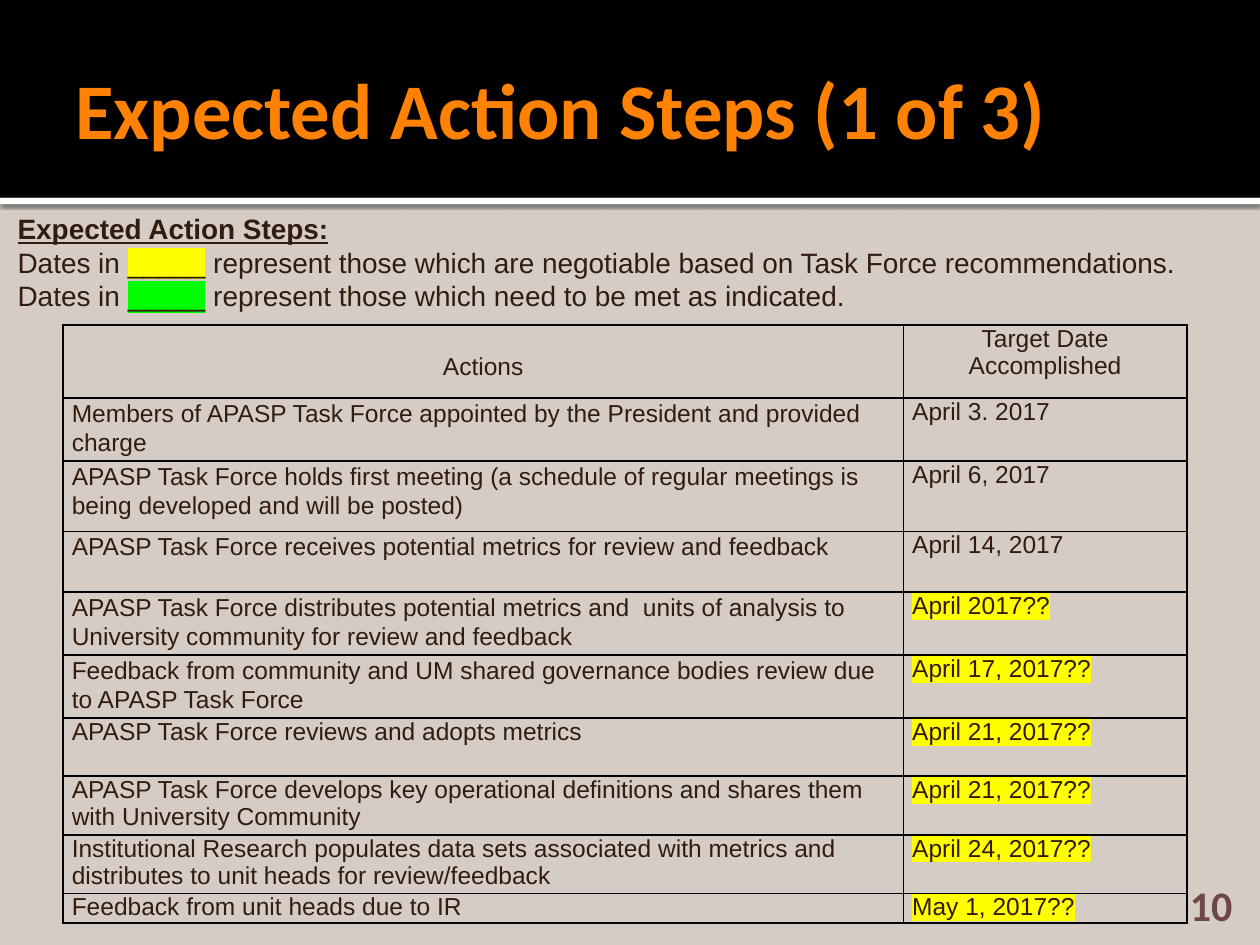
import pptx
import pptx.dml.color
import pptx.enum.shapes
import pptx.enum.text
import pptx.oxml
import pptx.oxml.ns
import pptx.util

ALIGN = pptx.enum.text.PP_ALIGN
ANCHOR = pptx.enum.text.MSO_ANCHOR
INK, YELLOW, GREEN = "311C0F", "FFFF00", "00FF00"
BODY = {"size": 16, "name": "Arial", "color": INK}
CELL = {**BODY, "size": 14}
TITLE = {"size": 45, "name": "Calibri", "color": "FF8205", "bold": True}
NUMBER = {"size": 24, "name": "Calibri", "color": "6E4549", "bold": True}


def color(value):
    return pptx.dml.color.RGBColor.from_string(value)


def xml(text):
    """Parse one DrawingML element; its root tag has no attributes yet."""
    head, rest = text.split(">", 1)
    return pptx.oxml.parse_xml(f'{head} {pptx.oxml.ns.nsdecls("a")}>{rest}')


class SlideBuilder:
    """Places elements on a grid of 100 columns by 75 rows."""

    def __init__(self, deck, background):
        self.column = deck.slide_width / 100
        self.row = deck.slide_height / 75
        self.slide = deck.slides.add_slide(deck.slide_layouts[6])
        fill = self.slide.background.fill
        fill.solid()
        fill.fore_color.rgb = color(background)

    def place(self, left, top, width, height):
        return (round(left * self.column), round(top * self.row),
                round(width * self.column), round(height * self.row))

    def band(self, area, fill, shadow=False):
        kind = pptx.enum.shapes.MSO_SHAPE.RECTANGLE
        shape = self.slide.shapes.add_shape(kind, *self.place(*area))
        shape.shadow.inherit = False
        shape.fill.solid()
        shape.fill.fore_color.rgb = color(fill)
        shape.line.fill.background()
        if shadow:
            effects = shape._element.spPr.find(pptx.oxml.ns.qn("a:effectLst"))
            outer = xml('<a:outerShdw><a:srgbClr val="000000">'
                        '<a:alpha val="60000"/></a:srgbClr></a:outerShdw>')
            for key, value in {"blurRad": 31750, "dist": 10160, "dir": 5400000}.items():
                outer.set(key, str(value))
            effects.append(outer)

    def add_spans(self, para, spans, style):
        """Spans are (text, format changes) pairs."""
        for text, changes in spans:
            span = para.add_run()
            span.text = text
            values = {**style, **changes}
            marker = values.pop("highlight", None)
            span.font.color.rgb = color(values.pop("color"))
            values["size"] = pptx.util.Pt(values["size"])
            for key, value in values.items():
                setattr(span.font, key, value)
            if marker:
                ink = span.font._element.find(pptx.oxml.ns.qn("a:solidFill"))
                ink.addnext(xml(f'<a:highlight><a:srgbClr val="{marker}"/></a:highlight>'))

    def text(self, area, lines, style, margins, anchor=ANCHOR.TOP, align=ALIGN.LEFT):
        frame = self.slide.shapes.add_textbox(*self.place(*area)).text_frame
        frame.word_wrap = True
        frame.vertical_anchor = anchor
        for side, margin in zip(("left", "top", "right", "bottom"), margins):
            setattr(frame, f"margin_{side}", pptx.util.Inches(margin))
        for index, spans in enumerate(lines):
            para = frame.add_paragraph() if index else frame.paragraphs[0]
            para.alignment = align
            self.add_spans(para, spans, style)

    def cell(self, cell, text, style, changes, layout, top=0):
        for side, margin in {"left": 0.07, "right": 0.07, "top": top, "bottom": 0}.items():
            setattr(cell, f"margin_{side}", pptx.util.Inches(margin))
        properties = cell._tc.get_or_add_tcPr()
        for side in "LRTB":
            border = xml(f'<a:ln{side}><a:solidFill><a:srgbClr val="000000"/>'
                         f'</a:solidFill></a:ln{side}>')
            border.set("w", str(pptx.util.Pt(1)))
            properties.append(border)
        cell.fill.background()
        para = cell.text_frame.paragraphs[0]
        for key, value in layout.items():
            setattr(para, key, value)
        self.add_spans(para, [(text, changes)], style)

    def table(self, area, widths, header, rows, style):
        """Rows are (height, line spacing, action, date, highlight)."""
        header_height, header_cells = header
        heights = [header_height] + [row[0] for row in rows]
        frame = self.slide.shapes.add_table(len(heights), len(widths), *self.place(*area))
        table = frame.table
        table.first_row = table.horz_banding = False
        for column, width in zip(table.columns, widths):
            column.width = round(width * self.column)
        for row, height in zip(table.rows, heights):
            row.height = round(height * self.row)
        for index, (text, top) in enumerate(header_cells):
            self.cell(table.cell(0, index), text, style, {},
                      {"alignment": ALIGN.CENTER}, top)
        for index, (_, spacing, action, date, marker) in enumerate(rows, 1):
            self.cell(table.cell(index, 0), action, style, {}, {"line_spacing": spacing})
            self.cell(table.cell(index, 1), date, style, {"highlight": marker}, {})


def legend(marker, meaning):
    return [("Dates in ", {}), ("_____", {"highlight": marker}),
            (f" represent those which {meaning}", {})]


ACTIONS = [
    (4.8, 1.07, "Members of APASP Task Force appointed by the President and provided charge",
     "April 3. 2017", None),
    (5.6, 1.07, "APASP Task Force holds first meeting (a schedule of regular meetings is "
     "being developed and will be posted)", "April 6, 2017", None),
    (4.8, 1.07, "APASP Task Force receives potential metrics for review and feedback",
     "April 14, 2017", None),
    (4.8, 1.07, "APASP Task Force distributes potential metrics and  units of analysis to "
     "University community for review and feedback", "April 2017??", YELLOW),
    (4.8, 1.07, "Feedback from community and UM shared governance bodies review due "
     "to APASP Task Force", "April 17, 2017??", YELLOW),
    (4.6, 1.0, "APASP Task Force reviews and adopts metrics", "April 21, 2017??", YELLOW),
    (4.6, 1.0, "APASP Task Force develops key operational definitions and shares them "
     "with University Community", "April 21, 2017??", YELLOW),
    (4.6, 1.0, "Institutional Research populates data sets associated with metrics and "
     "distributes to unit heads for review/feedback", "April 24, 2017??", YELLOW),
    (2.3, 1.0, "Feedback from unit heads due to IR", "May 1, 2017??", YELLOW),
]


def main():
    deck = pptx.Presentation()
    deck.slide_width = pptx.util.Inches(10)
    deck.slide_height = pptx.util.Inches(7.5)
    builder = SlideBuilder(deck, "D5CDC5")

    # Title band with its white rule
    builder.band((0, 15.7, 100, 0.5), "FFFFFF", shadow=True)
    builder.band((0, 0, 100, 15.7), "000000")
    builder.text((5, 1.7, 90, 13.7), [[("Expected Action Steps (1 of 3)", {})]],
                 TITLE, (0.1, 0.05, 0.05, 0.05), ANCHOR.MIDDLE)

    # Legend for the highlighted dates
    builder.text((0.8, 15.8, 97.5, 9.8), [
        [("Expected Action Steps:", {"bold": True, "underline": True})],
        legend(YELLOW, "are negotiable based on Task Force recommendations."),
        legend(GREEN, "need to be met as indicated."),
    ], BODY, (0.06, 0.1, 0.1, 0.05))

    # Actions and their target dates
    header = (5.8, [("Actions", 0.22), ("Target Date Accomplished", 0)])
    builder.table((5, 25.8, 89.2, 46.7), (66.7, 22.5), header, ACTIONS, CELL)

    # Slide number
    builder.text((90.8, 70.8, 8, 3), [[("10", {})]], NUMBER,
                 (0.1, 0.05, 0.1, 0), ANCHOR.BOTTOM, ALIGN.RIGHT)

    deck.save("out.pptx")


if __name__ == "__main__":
    main()
